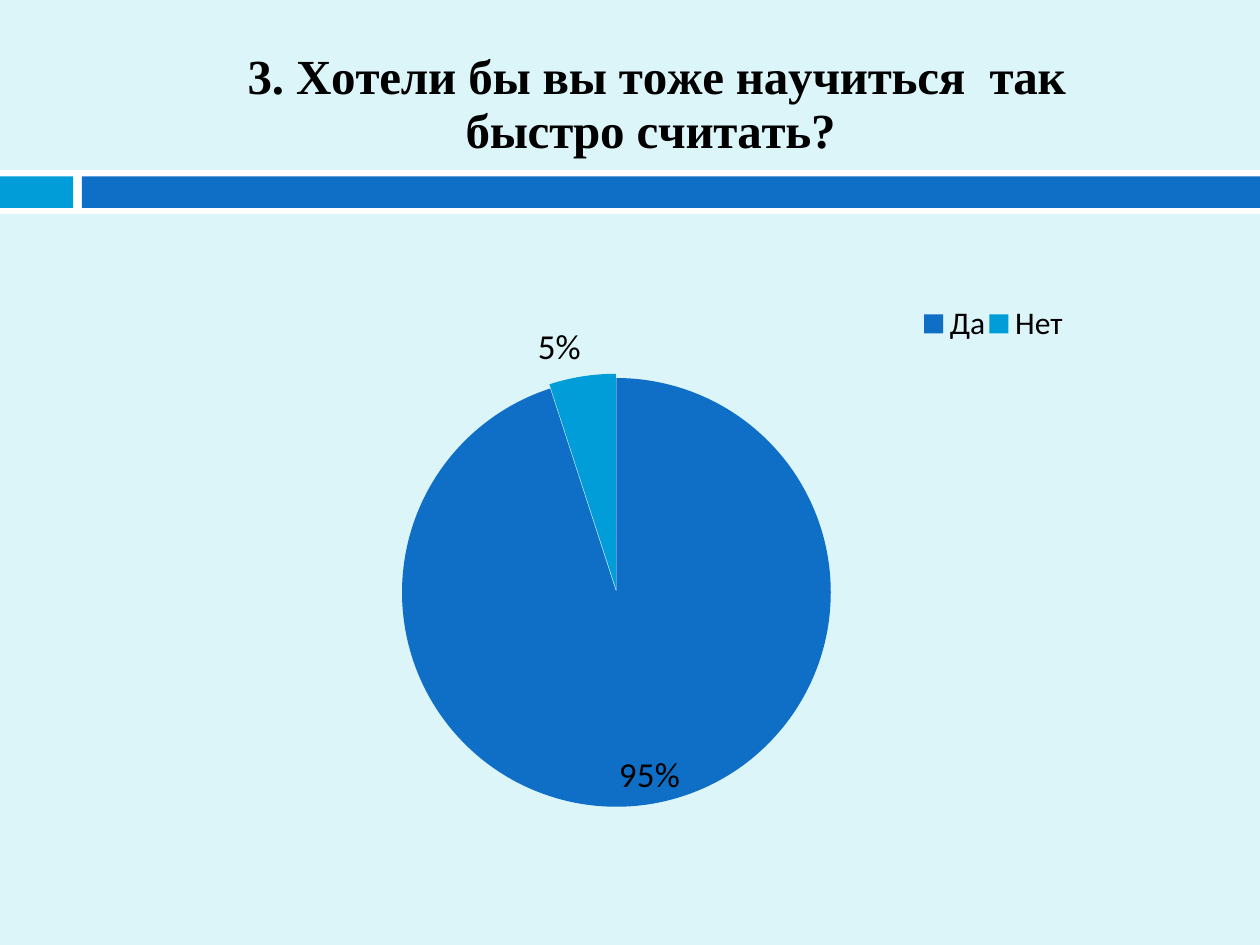
from lxml.etree import SubElement
from pptx import Presentation
from pptx.chart.data import CategoryChartData
from pptx.dml.color import RGBColor
from pptx.enum.chart import XL_CHART_TYPE, XL_LABEL_POSITION, XL_LEGEND_POSITION
from pptx.enum.shapes import MSO_SHAPE
from pptx.oxml import parse_xml
from pptx.oxml.ns import nsdecls, qn
from pptx.util import Inches, Pt

BACKGROUND = RGBColor(0xDB, 0xF5, 0xF9)
WHITE = RGBColor(0xFF, 0xFF, 0xFF)
BLACK = RGBColor(0x00, 0x00, 0x00)
BLUE = RGBColor(0x0F, 0x6F, 0xC6)
CYAN = RGBColor(0x00, 0x9D, 0xD9)

WIDTH, HEIGHT = Inches(10), Inches(7.5)
BAND_TOP, BAND_HEIGHT = Inches(1.35), Inches(0.35)
BAR_TOP, BAR_HEIGHT = Inches(1.4), Inches(0.25)
TAB_WIDTH, BAR_LEFT = Inches(0.58), Inches(0.65)
PIE_MIDDLE, PIE_HEIGHT = 0.665, 0.52  # shares of the chart's height


def add_bar(s, left, top, width, height, color):
    sp = s.shapes.add_shape(MSO_SHAPE.RECTANGLE, left, top, width, height)
    sp.shadow.inherit = False
    sp.fill.solid()
    sp.fill.fore_color.rgb = color
    sp.line.fill.background()


def set_font(font, size, name="Calibri", bold=False):
    font.size = Pt(size)
    font.name = name
    font.bold = bold
    font.color.rgb = BLACK


def place(part, before, mode="edge", inner=False, **shares):
    """Place a chart part by shares of the chart's size."""
    for old in part.findall(qn("c:layout")):
        part.remove(old)
    layout = parse_xml(f"<c:layout {nsdecls('c')}><c:manualLayout/></c:layout>")
    manual = layout[0]
    if inner:
        SubElement(manual, qn("c:layoutTarget")).set("val", "inner")
    for axis in ("x", "y"):
        SubElement(manual, qn(f"c:{axis}Mode")).set("val", mode)
    for key, share in shares.items():
        SubElement(manual, qn(f"c:{key}")).set("val", str(share))
    part.find(qn(before)).addprevious(layout)


def add_title(chart, text):
    chart.has_title = True
    title = chart.chart_title
    p = title.text_frame.paragraphs[0]
    p.text = text
    set_font(p.font, 28, "Times New Roman", bold=True)
    place(title._element, "c:overlay", x=0.14, y=0)


def add_legend(chart):
    chart.has_legend = True
    legend = chart.legend
    legend.position = XL_LEGEND_POSITION.TOP
    legend.include_in_layout = False
    set_font(legend.font, 18)
    place(legend._element, "c:overlay", x=0.79, y=0.31, w=0.14, h=0.07)


def style_slices(series, colors):
    for i, color in enumerate(colors):
        fill = series.points[i].format.fill
        fill.solid()
        fill.fore_color.rgb = color
    explosion = parse_xml(f'<c:explosion {nsdecls("c")} val="1"/>')
    series._element.find(qn("c:dPt")).addprevious(explosion)


def add_percent_labels(series, positions, shifts):
    labels = series.data_labels
    labels.show_value = False
    labels.show_percentage = True
    set_font(labels.font, 20)
    for i, position in enumerate(positions):
        label = series.points[i].data_label
        set_font(label.font, 20)
        label.position = position
    for item, shift in zip(series._element.iter(qn("c:dLbl")), shifts):
        item.find(qn("c:showVal")).set("val", "0")
        item.find(qn("c:showPercent")).set("val", "1")
        if shift:
            place(item, "c:txPr", mode="factor", x=shift, y=0)


def add_pie(s):
    data = CategoryChartData()
    data.categories = ["Да", "Нет"]
    data.add_series("Series 1", (95, 5))
    chart = s.shapes.add_chart(XL_CHART_TYPE.PIE, Inches(0.73), Inches(0.29),
                               Inches(8.32), Inches(6.61), data).chart
    set_font(chart.font, 10)
    add_title(chart, "3. Хотели бы вы тоже научиться  так быстро считать? ")
    add_legend(chart)

    plot = chart.plots[0]
    plot.vary_by_categories = True
    series = plot.series[0]
    style_slices(series, (BLUE, CYAN))
    add_percent_labels(series, (XL_LABEL_POSITION.INSIDE_END,
                                XL_LABEL_POSITION.OUTSIDE_END), (0.03, 0))
    place(chart._chartSpace.chart.plotArea, "c:pieChart", inner=True, x=0.09,
          y=round(PIE_MIDDLE - PIE_HEIGHT / 2, 3), w=0.82, h=PIE_HEIGHT)


def main():
    prs = Presentation()
    prs.slide_width, prs.slide_height = WIDTH, HEIGHT
    s = prs.slides.add_slide(prs.slide_layouts[6])
    s.background.fill.solid()
    s.background.fill.fore_color.rgb = BACKGROUND

    # Divider band
    add_bar(s, 0, BAND_TOP, WIDTH, BAND_HEIGHT, WHITE)
    add_bar(s, 0, BAR_TOP, TAB_WIDTH, BAR_HEIGHT, CYAN)
    add_bar(s, BAR_LEFT, BAR_TOP, WIDTH - BAR_LEFT, BAR_HEIGHT, BLUE)

    # Survey answers
    add_pie(s)
    prs.save("out.pptx")


if __name__ == "__main__":
    main()
